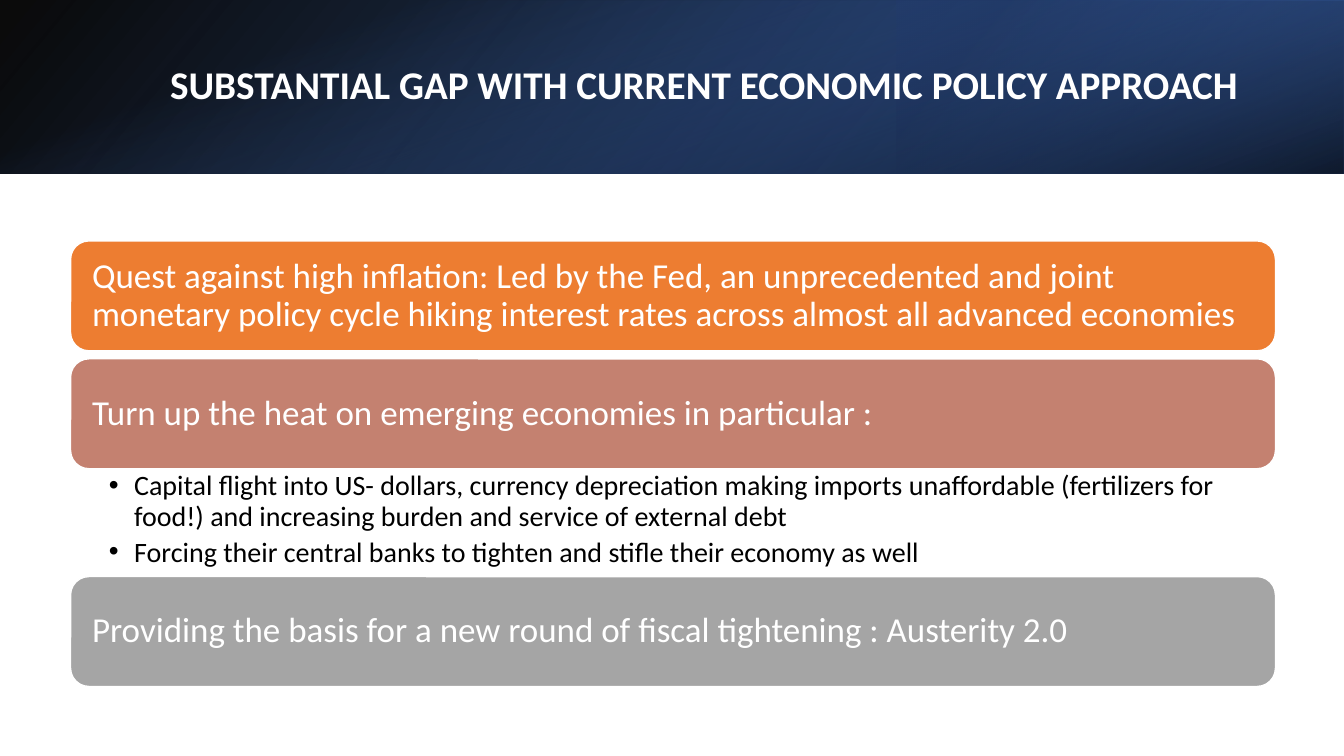
import pptx
import pptx.util
import pptx.dml.color
import pptx.enum.shapes
import pptx.enum.text
import pptx.oxml
import pptx.oxml.ns

PX = 9144
WIDTH, HEIGHT = 1333, 750
HEADER_HEIGHT = 172
FONT = "Calibri"
COLOURS = {
    "white": "FFFFFF",
    "black": "000000",
    "navy": "203864",
    "deep_blue": "2F5597",
    "blue": "4472C4",
    "orange": "ED7D31",
    "clay": "C48170",
    "grey": "A5A5A5",
}
CARD_HEIGHT = 109
CARDS = [
    (239, "orange", "Quest against high inflation: Led by the Fed, an unprecedented and joint monetary policy cycle hiking interest rates across almost all advanced economies"),
    (356, "clay", "Turn up the heat on emerging economies in particular :"),
    (572, "grey", "Providing the basis for a new round of fiscal tightening : Austerity 2.0"),
]
BULLETS = [
    "Capital flight into US- dollars, currency depreciation making imports unaffordable (fertilizers for food!) and increasing burden and service of external debt",
    "Forcing their central banks to tighten and stifle their economy as well",
]


def rgb(name):
    return pptx.dml.color.RGBColor.from_string(COLOURS[name])


def scaled(box):
    return [length * PX for length in box]


def place(shape, box):
    shape.left, shape.top, shape.width, shape.height = scaled(box)


def set_frame(frame, margins, anchor):
    frame.word_wrap = True
    frame.auto_size = pptx.enum.text.MSO_AUTO_SIZE.NONE
    frame.vertical_anchor = anchor
    frame.margin_left, frame.margin_top, frame.margin_right, frame.margin_bottom = scaled(margins)


def set_para(para, size, colour, after=0):
    para.alignment = pptx.enum.text.PP_ALIGN.LEFT
    para.line_spacing = 0.9
    para.space_before = pptx.util.Pt(0)
    para.space_after = pptx.util.Pt(after)
    para.font.name = FONT
    para.font.size = pptx.util.Pt(size)
    para.font.color.rgb = rgb(colour)


def add_panel(page, kind, box):
    panel = page.shapes.add_shape(kind, *scaled(box))
    panel.shadow.inherit = False
    return panel


def add_gradient(page, box, stops, angle, rotation, flipped):
    panel = add_panel(page, pptx.enum.shapes.MSO_SHAPE.RECTANGLE, box)
    panel.line.fill.background()
    panel.rotation = rotation
    properties = panel._element.spPr
    if flipped:
        properties.find(pptx.oxml.ns.qn("a:xfrm")).set("flipH", "1")
    stop_list = "".join(
        f'<a:gs pos="{position * 1000}"><a:srgbClr val="{COLOURS[colour]}">'
        f'<a:alpha val="{alpha * 1000}"/></a:srgbClr></a:gs>'
        for position, colour, alpha in stops
    )
    gradient = pptx.oxml.parse_xml(
        f'<a:gradFill {pptx.oxml.ns.nsdecls("a")} rotWithShape="1"><a:gsLst>{stop_list}</a:gsLst>'
        f'<a:lin ang="{angle * 60000}" scaled="0"/></a:gradFill>'
    )
    properties.find(pptx.oxml.ns.qn("a:prstGeom")).addnext(gradient)
    page.shapes.title._element.addprevious(panel._element)


def add_header(page, box):
    left, top, width, height = box
    third = width // 3
    turned = (left + (width - height) // 2, top - (width - height) // 2, height, width)
    add_gradient(page, box, [(0, "black", 96), (100, "deep_blue", 100)], 140, 0, True)
    add_gradient(page, (left + width - third, top, third, height),
                 [(19, "navy", 68), (100, "blue", 79)], 320, 180, True)
    add_gradient(page, turned, [(23, "blue", 0), (99, "black", 74)], 340, 90, False)

    title = page.shapes.title
    place(title, (left + 150, top + 38, 1098, 96))
    set_frame(title.text_frame, (10, 5, 10, 5), pptx.enum.text.MSO_ANCHOR.MIDDLE)
    title.text_frame.text = " SUBSTANTIAL GAP WITH CURRENT ECONOMIC POLICY APPROACH"
    para = title.text_frame.paragraphs[0]
    set_para(para, 28, "white")
    para.font.bold = True


def add_card(page, box, colour, text):
    card = add_panel(page, pptx.enum.shapes.MSO_SHAPE.ROUNDED_RECTANGLE, box)
    card.fill.solid()
    card.fill.fore_color.rgb = rgb(colour)
    card.line.color.rgb = rgb("white")
    card.line.width = pptx.util.Pt(1)
    set_frame(card.text_frame, (16, 15, 16, 15), pptx.enum.text.MSO_ANCHOR.MIDDLE)
    card.text_frame.text = text
    set_para(card.text_frame.paragraphs[0], 25, "white")


def add_bullets(page, box):
    body = page.placeholders[1]
    place(body, box)
    set_frame(body.text_frame, (38, 3, 19, 3), pptx.enum.text.MSO_ANCHOR.TOP)
    body.text_frame.text = "\n".join(BULLETS)
    for para in body.text_frame.paragraphs:
        para.level = 1
        set_para(para, 20, "black", 4)
        properties = para._p.get_or_add_pPr()
        properties.set("marL", str(25 * PX))
        properties.set("indent", str(-25 * PX))
        bullet = pptx.oxml.parse_xml(f'<a:buChar {pptx.oxml.ns.nsdecls("a")} char="•"/>')
        properties.find(pptx.oxml.ns.qn("a:spcAft")).addnext(bullet)


def add_content(page, left, width):
    for top, colour, text in CARDS:
        add_card(page, (left, top, width, CARD_HEIGHT), colour, text)
    list_top = CARDS[1][0] + CARD_HEIGHT
    add_bullets(page, (left, list_top, width, CARDS[2][0] - list_top))


def main():
    deck = pptx.Presentation()
    deck.slide_width, deck.slide_height = scaled((WIDTH, HEIGHT))
    page = deck.slides.add_slide(deck.slide_layouts[1])
    add_header(page, (0, 0, WIDTH, HEADER_HEIGHT))
    add_content(page, 70, 1195)
    deck.save("out.pptx")


if __name__ == "__main__":
    main()
